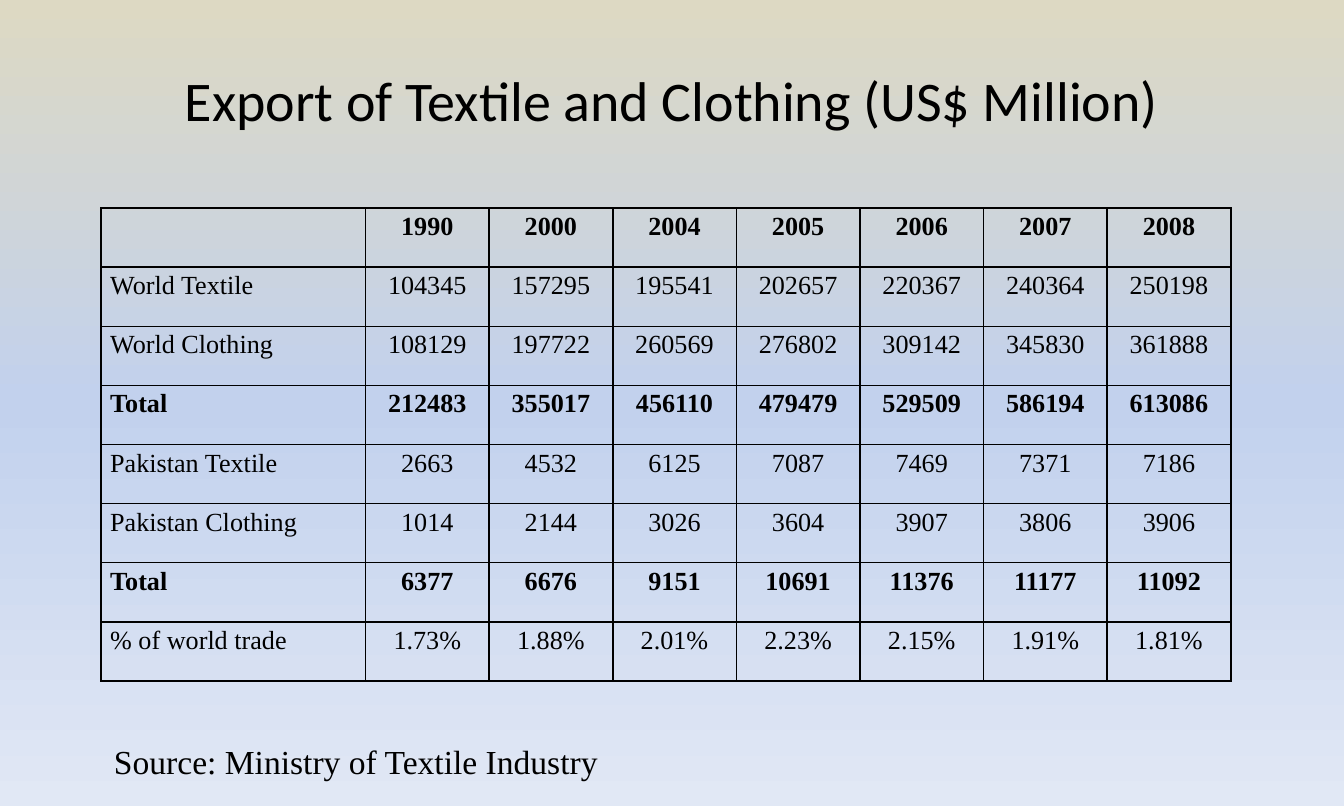
from copy import deepcopy

from lxml import etree
from pptx import Presentation
from pptx.dml.color import RGBColor
from pptx.enum.text import MSO_ANCHOR, PP_ALIGN
from pptx.oxml.ns import qn
from pptx.util import Inches, Pt

CENTER, JUSTIFY = PP_ALIGN.CENTER, PP_ALIGN.JUSTIFY
MIDDLE, TOP = MSO_ANCHOR.MIDDLE, MSO_ANCHOR.TOP
BLACK = "000000"
SERIF, SANS = "Times New Roman", "Calibri"
BACKGROUND_STOPS = [(0, "DDD9C3"), (0.5, "C2D1ED"), (1, "E1E8F5")]
LABEL_WIDTH, YEAR_WIDTH, ROW_HEIGHT = 1.97, 0.92, 0.44

EXPORTS = [
    ["", "1990", "2000", "2004", "2005", "2006", "2007", "2008"],
    ["World Textile", "104345", "157295", "195541", "202657", "220367", "240364", "250198"],
    ["World Clothing", "108129", "197722", "260569", "276802", "309142", "345830", "361888"],
    ["Total", "212483", "355017", "456110", "479479", "529509", "586194", "613086"],
    ["Pakistan Textile", "2663", "4532", "6125", "7087", "7469", "7371", "7186"],
    ["Pakistan Clothing", "1014", "2144", "3026", "3604", "3907", "3806", "3906"],
    ["Total", "6377", "6676", "9151", "10691", "11376", "11177", "11092"],
    ["% of world trade", "1.73%", "1.88%", "2.01%", "2.23%", "2.15%", "1.91%", "1.81%"],
]


def rgb(hex_colour):
    return RGBColor.from_string(hex_colour)


def set_all(target, values):
    for name, value in values.items():
        setattr(target, name, value)


def write(frame, text, size, font, align, bold=False, spacing=1.15):
    paragraph = frame.paragraphs[0]
    paragraph.text = text
    set_all(paragraph, {"alignment": align, "line_spacing": spacing})
    set_all(paragraph.font, {"size": Pt(size), "name": font, "bold": bold})
    paragraph.font.color.rgb = rgb(BLACK)
    for run in paragraph.runs:
        set_all(run.font, {"size": Pt(size), "name": font, "bold": bold})
        run.font.color.rgb = rgb(BLACK)


def paint_background(slide):
    fill = slide.background.fill
    fill.gradient()
    fill.gradient_angle = 270
    stop_list = slide.element.find(".//" + qn("a:gsLst"))
    stop_list.insert(1, deepcopy(stop_list[0]))
    for stop, (position, colour) in zip(fill.gradient_stops, BACKGROUND_STOPS):
        stop.position = position
        stop.color.rgb = rgb(colour)


def add_title(slide, left, top, width, height):
    title = slide.shapes.add_textbox(*map(Inches, (left, top, width, height)))
    set_all(title.text_frame, {"word_wrap": True, "vertical_anchor": MIDDLE})
    write(title.text_frame, "Export of Textile and Clothing (US$ Million)",
          30, SANS, CENTER, spacing=1.0)


def add_borders(cell, colour, points):
    properties = cell._tc.get_or_add_tcPr()
    for index, side in enumerate(("lnL", "lnR", "lnT", "lnB")):
        line = etree.Element(qn("a:" + side), w=str(Pt(points)))
        solid = etree.SubElement(line, qn("a:solidFill"))
        etree.SubElement(solid, qn("a:srgbClr"), val=colour)
        properties.insert(index, line)


def add_export_table(slide, left, top):
    row_count, column_count = len(EXPORTS), len(EXPORTS[0])
    widths = [LABEL_WIDTH] + [YEAR_WIDTH] * (column_count - 1)
    frame = slide.shapes.add_table(row_count, column_count, Inches(left), Inches(top),
                                   Inches(sum(widths)), Inches(ROW_HEIGHT * row_count))
    table = frame.table
    set_all(table, {"first_row": False, "horz_banding": False})
    for column, width in zip(table.columns, widths):
        column.width = Inches(width)
    for row, values in zip(table.rows, EXPORTS):
        row.height = Inches(ROW_HEIGHT)
        bold = values[0] in ("", "Total")
        for index, (cell, value) in enumerate(zip(row.cells, values)):
            set_all(cell, {"margin_left": Inches(0.07), "margin_right": Inches(0.07),
                           "margin_top": 0, "margin_bottom": 0, "vertical_anchor": TOP})
            write(cell.text_frame, value, 14, SERIF, CENTER if index else JUSTIFY, bold)
            cell.fill.background()
            add_borders(cell, BLACK, 1)


def add_source(slide, left, top, width, height):
    source = slide.shapes.add_textbox(*map(Inches, (left, top, width, height)))
    source.text_frame.word_wrap = False
    write(source.text_frame, "Source: Ministry of Textile Industry", 18, SERIF, JUSTIFY)


def main():
    deck = Presentation()
    set_all(deck, {"slide_width": Inches(10), "slide_height": Inches(6)})
    slide = deck.slides.add_slide(deck.slide_layouts[6])
    paint_background(slide)
    add_title(slide, 0.5, 0.24, 9, 1)
    add_export_table(slide, 0.75, 1.55)
    add_source(slide, 0.75, 5.42, 3.84, 0.45)
    deck.save("out.pptx")


if __name__ == "__main__":
    main()
